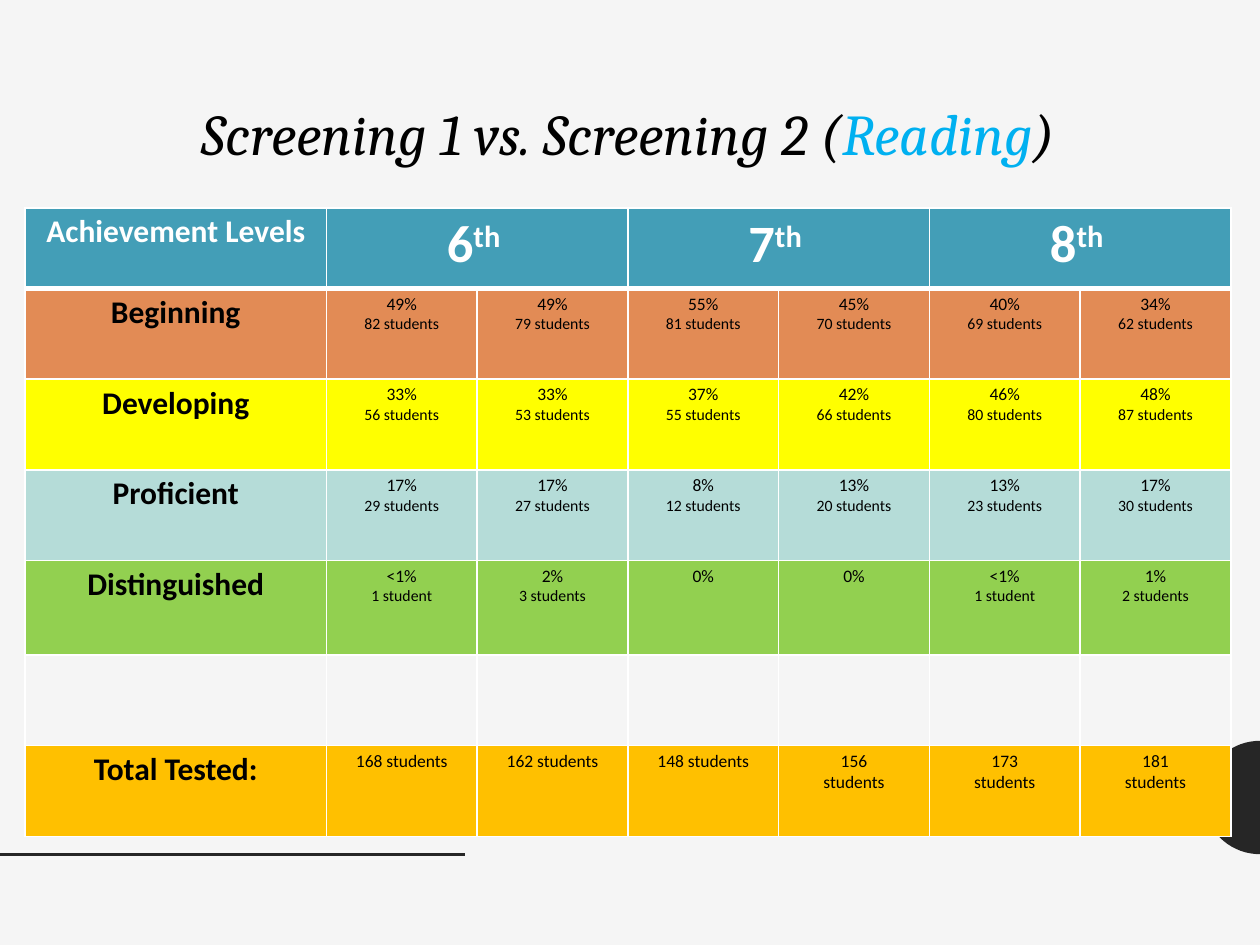
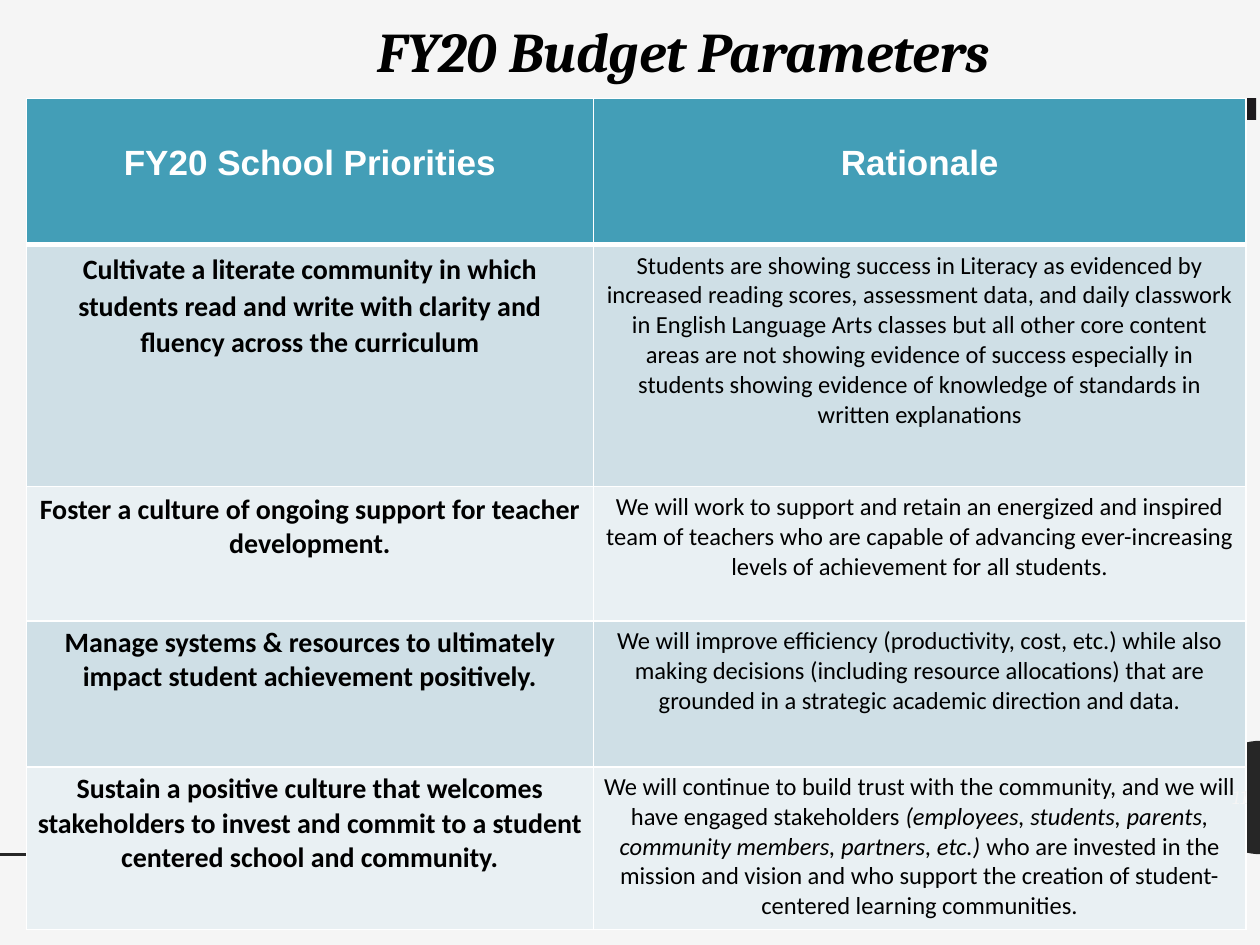
import math

from pptx import Presentation
from pptx import util as u
from pptx.dml.color import RGBColor
from pptx.enum import shapes, text
from pptx.oxml import parse_xml
from pptx.oxml.ns import nsdecls

WIDTH, HEIGHT = u.Inches(10), u.Inches(7.5)

PAPER = RGBColor(0xF5, 0xF5, 0xF5)
DARK = RGBColor(0x26, 0x26, 0x26)
BAR = RGBColor(0x1D, 0x1A, 0x1D)
BLACK = RGBColor(0, 0, 0)
WHITE = RGBColor(0xFF, 0xFF, 0xFF)
TEAL = RGBColor(0x43, 0x9E, 0xB7)
SKY = RGBColor(0x00, 0xB0, 0xF0)
ORANGE = RGBColor(0xE2, 0x8B, 0x55)
YELLOW = RGBColor(0xFF, 0xFF, 0x00)
MINT = RGBColor(0xB5, 0xDC, 0xD8)
GREEN = RGBColor(0x92, 0xD0, 0x50)
GOLD = RGBColor(0xFF, 0xC0, 0x00)
BANDS = RGBColor(0xCF, 0xDF, 0xE6), RGBColor(0xE9, 0xF0, 0xF3)

TITLE_FONT, TABLE_FONT = "Cambria", "Calibri"
NARROW, REGULAR = (0.07, 0.04), (0.1, 0.05)  # side and top cell margins

GRADES = ["6", "7", "8"]
# Level, colour, then one cell per screening; "|" parts the lines of a cell
LEVELS = [
    ("Beginning", ORANGE, ["49%|82 students", "49%|79 students", "55%|81 students",
                           "45%|70 students", "40%|69 students", "34%|62 students"]),
    ("Developing", YELLOW, ["33%|56 students", "33%|53 students", "37%|55 students",
                            "42%|66 students", "46%|80 students", "48%|87 students"]),
    ("Proficient", MINT, ["17%|29 students", "17%|27 students", "8%|12 students",
                          "13%|20 students", "13%|23 students", "17%|30 students"]),
    ("Distinguished", GREEN, ["<1%|1 student", "2%|3 students", "0%",
                              "0%", "<1%|1 student", "1%|2 students"]),
    ("", None, [""] * 6),
    ("Total Tested:", GOLD, ["168 students", "162 students", "148 students",
                             "156|students", "173|students", "181|students"]),
]

# Priority, then its rationale; "*" opens and closes italics
PRIORITIES = [
    ("Cultivate a literate community in which students read and write with clarity "
     "and fluency across the curriculum",
     "Students are showing success in Literacy as evidenced by increased reading scores, "
     "assessment data, and daily classwork in English Language Arts classes but all other "
     "core content areas are not showing evidence of success especially in students showing "
     "evidence of knowledge of standards in written explanations"),
    ("Foster a culture of ongoing support for teacher development.",
     "We will work to support and retain an energized and inspired team of teachers who are "
     "capable of advancing ever-increasing levels of achievement for all students."),
    ("Manage systems & resources to ultimately impact student achievement positively.",
     "We will improve efficiency (productivity, cost, etc.) while also making decisions "
     "(including resource allocations) that are grounded in a strategic academic direction "
     "and data."),
    ("Sustain a positive culture that welcomes stakeholders to invest and commit to a "
     "student centered school and community.",
     "We will continue to build trust with the community, and we will have engaged "
     "stakeholders *(employees, students, parents, community members, partners, etc.) *who "
     "are invested in the mission and vision and who support the creation of "
     "student-centered learning communities."),
]


def style(para, size, color, name=TABLE_FONT, bold=False, italic=False,
          align=text.PP_ALIGN.CENTER):
    para.alignment = align
    font = para.font
    font.size, font.name, font.bold, font.italic = u.Pt(size), name, bold, italic
    font.color.rgb = color


def add_span(para, words):
    span = para.add_run()
    span.text = words
    return span


def paint(shape, color):
    shape.shadow.inherit = False
    shape.fill.solid()
    shape.fill.fore_color.rgb = color
    shape.line.fill.background()


def add_text(page, left, top, width, height, words, size, color=BLACK, **look):
    """Add a one-paragraph box, placed in shares of the slide."""
    box = page.shapes.add_textbox(int(WIDTH * left), int(HEIGHT * top),
                                  int(WIDTH * width), int(HEIGHT * height))
    box.text_frame.word_wrap = True
    para = box.text_frame.paragraphs[0]
    style(para, size, color, TITLE_FONT, italic=True, **look)
    spans = [add_span(para, part) for part in words]
    return box, spans


def add_page(deck):
    """Add a page with the shared background, half disc and footer rule."""
    page = deck.slides.add_slide(deck.slide_layouts[6])
    page.background.fill.solid()
    page.background.fill.fore_color.rgb = PAPER

    radius, middle = HEIGHT * 0.06, HEIGHT * 0.844
    arc = [(int(WIDTH - radius * math.sin(math.radians(angle))),
            int(middle - radius * math.cos(math.radians(angle))))
           for angle in range(0, 181, 5)]
    outline = page.shapes.build_freeform(*arc[0])
    outline.add_line_segments(arc[1:], close=True)
    paint(outline.convert_to_shape(), DARK)

    level = int(middle + radius)
    rule = page.shapes.add_connector(shapes.MSO_CONNECTOR.STRAIGHT,
                                     0, level, int(WIDTH * 0.369), level)
    rule.line.color.rgb = DARK
    rule.line.width = u.Pt(2)
    rule._element.spPr.append(parse_xml(f"<a:effectLst {nsdecls('a')}/>"))
    return page


def add_grid(page, left, top, widths, heights):
    """Add a table in inches, with white borders and a thick rule under row one."""
    frame = page.shapes.add_table(len(heights), len(widths), u.Inches(left), u.Inches(top),
                                  u.Inches(sum(widths)), u.Inches(sum(heights)))
    table = frame.table
    table.horz_banding = False
    for column, width in zip(table.columns, widths):
        column.width = u.Inches(width)
    for index, (row, height) in enumerate(zip(table.rows, heights)):
        row.height = u.Inches(height)
        for cell in row.cells:
            for side in "LRTB":
                thick = (index, side) in ((0, "B"), (1, "T"))
                cell._tc.get_or_add_tcPr().append(parse_xml(
                    f'<a:ln{side} {nsdecls("a")} w="{u.Pt(3 if thick else 1)}"><a:solidFill>'
                    f'<a:srgbClr val="{WHITE}"/></a:solidFill></a:ln{side}>'))
    return table


def fill_cell(cell, words, sizes, fill, margins, color=BLACK, **look):
    """Write the lines of a cell, one size to each line."""
    cell.margin_left = cell.margin_right = u.Inches(margins[0])
    cell.margin_top = cell.margin_bottom = u.Inches(margins[1])
    if fill is None:
        cell.fill.background()
        return
    cell.fill.solid()
    cell.fill.fore_color.rgb = fill
    frame = cell.text_frame
    for index, (line, size) in enumerate(zip(words.split("|"), sizes)):
        para = frame.add_paragraph() if index else frame.paragraphs[0]
        style(para, size, color, **look)
        for part, piece in enumerate(line.split("*")):
            span = add_span(para, piece)
            if part % 2:
                span.font.italic = True


def add_screening_page(deck):
    page = add_page(deck)
    box, spans = add_text(page, 0.086, 0.105, 0.825, 0.176,
                          ["Screening 1 vs. Screening 2 (", "Reading", ")"], 33)
    box.text_frame.paragraphs[0].line_spacing = 0.9
    spans[1].font.color.rgb = SKY

    table = add_grid(page, 0.2, 1.65, [2.39] + [7.18 / 6] * 6,
                     [0.64, 0.72, 0.72, 0.72, 0.75, 0.72, 0.72])
    # Header: each grade spans its two screenings
    header = dict(fill=TEAL, margins=NARROW, color=WHITE, bold=True)
    fill_cell(table.cell(0, 0), "Achievement Levels", [18], **header)
    for index, grade in enumerate(GRADES):
        first = 1 + 2 * index
        cell = table.cell(0, first)
        cell.merge(table.cell(0, first + 1))
        fill_cell(cell, grade, [30], **header)
        ordinal = add_span(cell.text_frame.paragraphs[0], "th ")
        ordinal._r.get_or_add_rPr().set("baseline", "30000")
    # Levels
    for row, (level, fill, results) in enumerate(LEVELS, 1):
        fill_cell(table.cell(row, 0), level, [18], fill, NARROW, bold=True)
        sizes = [10, 10] if fill == GOLD else [10, 9]
        for column, result in enumerate(results, 1):
            fill_cell(table.cell(row, column), result, sizes, fill, NARROW)


def add_budget_page(deck):
    page = add_page(deck)
    bar = page.shapes.add_shape(shapes.MSO_SHAPE.RECTANGLE, int(WIDTH * 0.078),
                                int(HEIGHT * 0.104), int(WIDTH * 0.919), int(HEIGHT * 0.023))
    paint(bar, BAR)
    add_text(page, 0.096, 0.011, 0.893, 0.085, ["FY20 Budget Parameters"], 32, bold=True)

    table = add_grid(page, 0.21, 0.78, [4.5, 5.18], [1.16, 1.92, 1.07, 1.16, 1.29])
    for column, heading in enumerate(["FY20 School Priorities", "Rationale"]):
        cell = table.cell(0, column)
        fill_cell(cell, heading, [20], TEAL, REGULAR, WHITE, name="Arial", bold=True)
        cell.margin_top = u.Inches(0.36)
    for row, (priority, rationale) in enumerate(PRIORITIES, 1):
        fill = BANDS[(row - 1) % 2]
        margins = REGULAR if row < 3 else NARROW
        fill_cell(table.cell(row, 0), priority, [16], fill, margins, bold=True)
        fill_cell(table.cell(row, 1), rationale, [14], fill, margins)
    opening = table.cell(1, 0).text_frame.paragraphs[0]
    opening.line_spacing = 1.07
    opening.space_after = u.Pt(8)

    # Page number
    box, _ = add_text(page, 0.955, 0.817, 0.045, 0.053, ["11"], 11, PAPER,
                      align=text.PP_ALIGN.RIGHT)
    box.text_frame.vertical_anchor = text.MSO_ANCHOR.MIDDLE


def main():
    deck = Presentation()
    deck.slide_width, deck.slide_height = WIDTH, HEIGHT
    add_screening_page(deck)
    add_budget_page(deck)
    deck.save("out.pptx")


if __name__ == "__main__":
    main()
